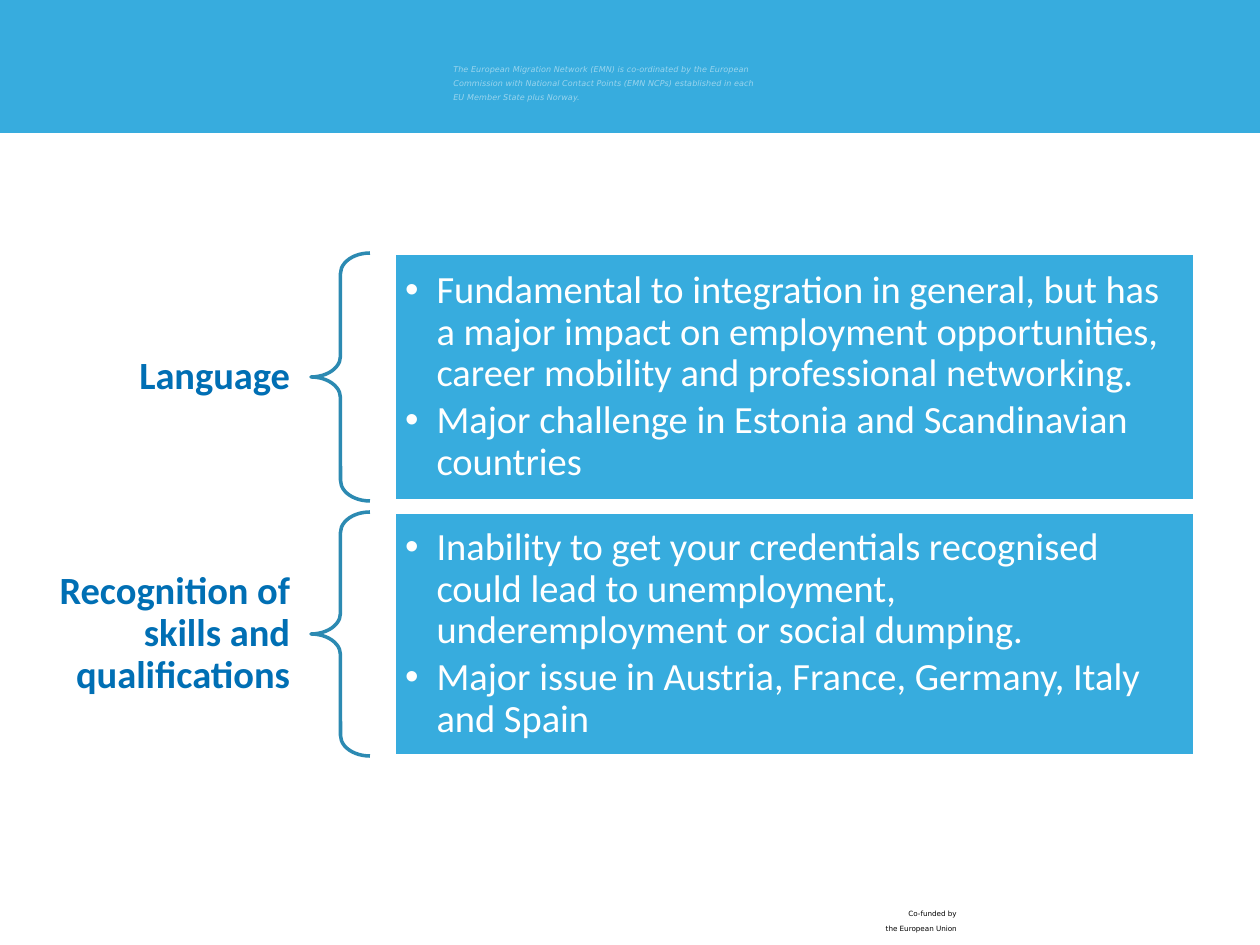
from lxml.etree import SubElement
from pptx import Presentation
from pptx.dml.color import RGBColor
from pptx.enum.shapes import MSO_SHAPE
from pptx.enum.text import MSO_ANCHOR, PP_ALIGN
from pptx.oxml.ns import qn
from pptx.util import Emu, Pt

SKY = RGBColor(0x37, 0xAC, 0xDE)
STEEL = RGBColor(0x2C, 0x8A, 0xB2)
BLUE = RGBColor(0x00, 0x6F, 0xB4)
WHITE = RGBColor(0xFF, 0xFF, 0xFF)
BLACK = RGBColor(0x00, 0x00, 0x00)

NETWORK_NOTE = (
    "The European Migration Network (EMN) is co-ordinated by the European Commission "
    "with National Contact Points (EMN NCPs) established in each EU Member State plus Norway."
)
FUNDING_NOTE = "Co-funded by\nthe European Union"
TOPICS = [
    ("Language", 248, [
        "Fundamental to integration in general, but has a major impact on employment "
        "opportunities, career mobility and professional networking.",
        "Major challenge in Estonia and Scandinavian countries",
    ]),
    ("Recognition of skills and qualifications", 244, [
        "Inability to get your credentials recognised could lead to unemployment, "
        "underemployment or social dumping.",
        "Major issue in Austria, France, Germany, Italy and Spain",
    ]),
]
FIRST_TOP, ROW_GAP = 253, 11
LABEL_LEFT, LABEL_WIDTH = 18, 294
BRACE_LEFT, BRACE_WIDTH = 311, 59
PANEL_LEFT, PANEL_WIDTH = 394, 801


def px(value):
    return Emu(round(value * 914400 / 126))


def add_shape(page, kind, area, fill, line, line_width):
    shape = page.shapes.add_shape(kind, *map(px, area))
    shape.shadow.inherit = False
    if fill is None:
        shape.fill.background()
    else:
        shape.fill.solid()
        shape.fill.fore_color.rgb = fill
    shape.line.color.rgb = line
    shape.line.width = Pt(line_width)
    return shape


def add_text_box(page, area):
    box = page.shapes.add_textbox(*map(px, area))
    box.text_frame.word_wrap = True
    return box


def set_margins(frame, across, down):
    frame.margin_left = frame.margin_right = px(across)
    frame.margin_top = frame.margin_bottom = px(down)
    frame.vertical_anchor = MSO_ANCHOR.MIDDLE


def set_font(para, name, size, color, bold=False, italic=False):
    font = para.font
    font.name, font.size = name, Pt(size)
    font.bold, font.italic = bold, italic
    font.color.rgb = color


def add_note(page, area, text, size, color, italic=False):
    para = add_text_box(page, area).text_frame.paragraphs[0]
    para.text = text
    set_font(para, "DejaVu Sans", size, color, italic=italic)
    for span in para.runs:
        span.font._element.set("baseline", "30000")
    return para


def add_bullet(para):
    properties = para._p.get_or_add_pPr()
    properties.set("marL", str(px(31.5)))
    properties.set("indent", str(-px(31.5)))
    SubElement(properties, qn("a:buFont"), typeface="Arial")
    SubElement(properties, qn("a:buChar"), char="•")


def add_label(page, top, height, text):
    frame = add_text_box(page, (LABEL_LEFT, top, LABEL_WIDTH, height)).text_frame
    set_margins(frame, 22, 8)
    para = frame.paragraphs[0]
    para.text = text
    para.alignment = PP_ALIGN.RIGHT
    para.line_spacing = 0.9
    set_font(para, "Calibri", 22, BLUE, bold=True)


def add_panel(page, top, height, points):
    panel = add_shape(page, MSO_SHAPE.RECTANGLE, (PANEL_LEFT, top, PANEL_WIDTH, height), SKY, WHITE, 2)
    frame = panel.text_frame
    frame.word_wrap = True
    set_margins(frame, 11, 11)
    for index, point in enumerate(points):
        para = frame.add_paragraph() if index else frame.paragraphs[0]
        para.text = point
        para.alignment = PP_ALIGN.LEFT
        para.line_spacing = 0.9
        para.space_after = Pt(3)
        add_bullet(para)
        set_font(para, "Calibri", 22, WHITE)


def main():
    deck = Presentation()
    deck.slide_width, deck.slide_height = px(1260), px(945)
    page = deck.slides.add_slide(deck.slide_layouts[6])

    add_shape(page, MSO_SHAPE.RECTANGLE, (0, 0, 1260, 132), SKY, SKY, 0.75)
    network = add_note(page, (441, 59, 338, 54), NETWORK_NOTE, 8, WHITE, italic=True)
    network.line_spacing = Pt(8)
    span_color = network.runs[0].font
    span_color.color.rgb = WHITE
    color_element = span_color._element.find(".//" + qn("a:srgbClr"))
    SubElement(color_element, qn("a:alpha"), val="50000")
    funding = add_note(page, (842, 902, 127, 33), FUNDING_NOTE, 7, BLACK)
    funding.alignment = PP_ALIGN.RIGHT

    top = FIRST_TOP
    for label, height, points in TOPICS:
        add_label(page, top, height, label)
        brace = add_shape(page, MSO_SHAPE.LEFT_BRACE, (BRACE_LEFT, top, BRACE_WIDTH, height), None, STEEL, 2)
        brace.adjustments[0] = 0.35
        brace.adjustments[1] = 0.5
        add_panel(page, top, height, points)
        top += height + ROW_GAP

    deck.save("out.pptx")


if __name__ == "__main__":
    main()
